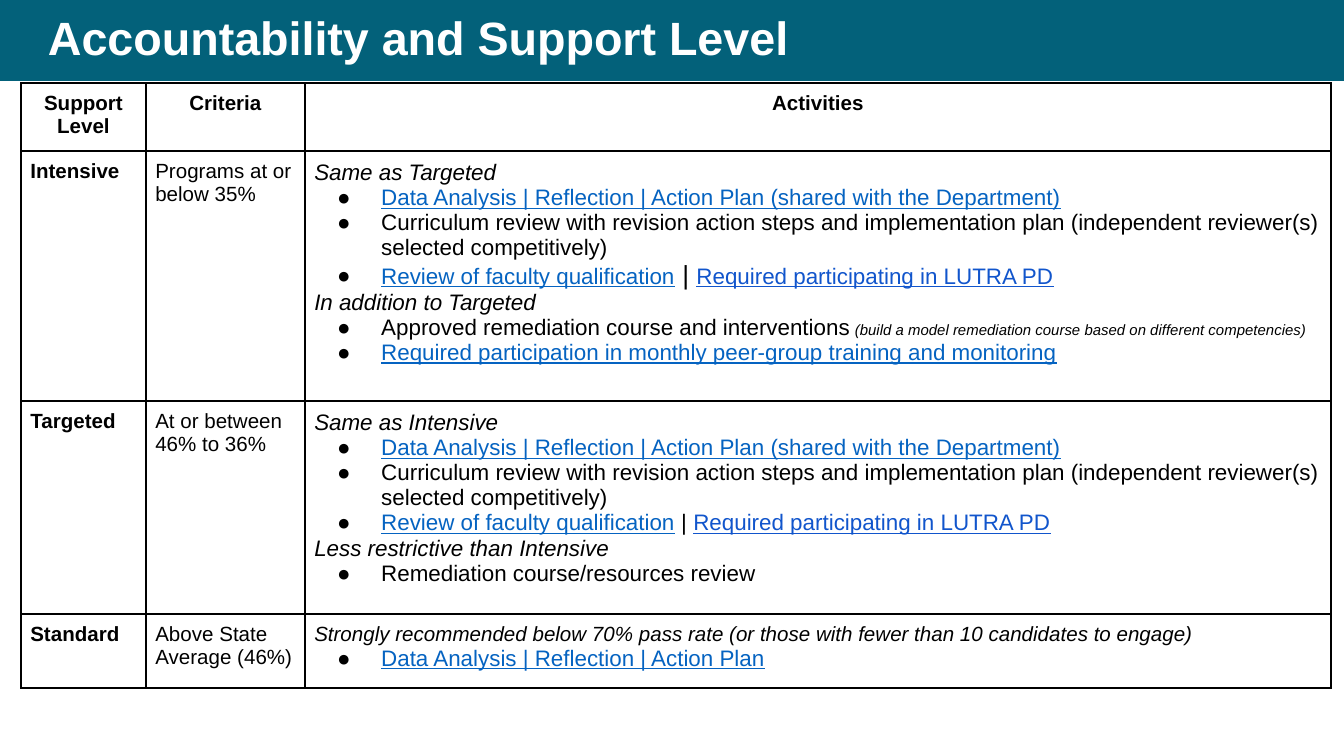
from lxml.etree import SubElement
from pptx import Presentation
from pptx.dml.color import RGBColor
from pptx.enum.shapes import MSO_SHAPE
from pptx.enum.text import MSO_ANCHOR, PP_ALIGN
from pptx.oxml.ns import qn
from pptx.util import Emu, Pt

PX = 914400 / 134.4

THEME = {
    "font": "Arial",
    "banner": "03617A", "white": "FFFFFF", "ink": "000000",
    "link": "0563C1", "course_link": "1155CC",
    "title": 25, "label": 11, "body": 12, "divider": 14, "note": 8,
}


def px(length):
    return Emu(round(length * PX))


def write(paragraph, text, size="body", color="ink", bold=False, italic=False, underline=False):
    run = paragraph.add_run()
    run.text = text
    font = run.font
    font.name = THEME["font"]
    font.size = Pt(THEME[size])
    font.color.rgb = RGBColor.from_string(THEME[color])
    font.bold, font.italic, font.underline = bold, italic, underline


presentation = Presentation()
presentation.slide_width, presentation.slide_height = px(1344), px(756)
slide = presentation.slides.add_slide(presentation.slide_layouts[6])

# Banner and title
banner = slide.shapes.add_shape(MSO_SHAPE.RECTANGLE, 0, 0, px(1344), px(81))
banner.shadow.inherit = False
banner.fill.solid()
banner.fill.fore_color.rgb = RGBColor.from_string(THEME["banner"])
banner.line.fill.background()

title_frame = slide.shapes.add_textbox(px(38), 0, px(1242), px(81)).text_frame
title_frame.word_wrap = True
title_frame.vertical_anchor = MSO_ANCHOR.MIDDLE
title_frame.margin_left = title_frame.margin_right = px(10)
title_frame.margin_top = title_frame.margin_bottom = px(5)
title_frame.paragraphs[0].line_spacing = 0.9
write(title_frame.paragraphs[0], "Accountability and Support Level",
      size="title", color="white", bold=True)

# Activities: each line is (bulleted, [(text, format), ...])
link = {"color": "link", "underline": True}
course_link = {"color": "course_link", "underline": True}
italic = {"italic": True}


def review_lines(divider_size):
    return [
        (True, [("Data Analysis | Reflection | Action Plan (shared with the Department)", link)]),
        (True, [("Curriculum review with revision action steps and implementation plan "
                 "(independent reviewer(s) selected competitively)", {})]),
        (True, [("Review of faculty qualification", link),
                (" | ", {"size": divider_size}),
                ("Required participating in LUTRA PD", course_link)]),
    ]


intensive = [
    (False, [("Same as Targeted", italic)]),
    *review_lines("divider"),
    (False, [("In addition to Targeted", italic)]),
    (True, [("Approved remediation course and interventions", {}),
            (" (build a model remediation course based on different competencies)",
             {"size": "note", "italic": True})]),
    (True, [("Required participation in monthly peer-group training and monitoring", link)]),
]
targeted = [
    (False, [("Same as Intensive", italic)]),
    *review_lines("body"),
    (False, [("Less restrictive than Intensive", italic)]),
    (True, [("Remediation course/resources review", {})]),
]
standard = [
    (False, [("Strongly recommended below 70% pass rate "
              "(or those with fewer than 10 candidates to engage)",
              {"size": "label", "italic": True})]),
    (True, [("Data Analysis | Reflection | Action Plan", link)]),
]

# Table content, every cell as a list of lines
heading = {"size": "label", "bold": True}
rows = [[[(False, [(text, heading)])] for text in ("Support Level", "Criteria", "Activities")]]
for level, criteria, activities in [
    ("Intensive", "Programs at or below 35%", intensive),
    ("Targeted", "At or between 46% to 36%", targeted),
    ("Standard", "Above State Average (46%)", standard),
]:
    rows.append([[(False, [(level, heading)])],
                 [(False, [(criteria, {"size": "label"})])],
                 activities])

# Table grid
column_widths = [125, 159, 1026]
row_heights = [65, 250, 213, 74]
table = slide.shapes.add_table(len(row_heights), len(column_widths), px(21), px(83),
                               px(sum(column_widths)), px(sum(row_heights))).table
table.first_row = table.horz_banding = False
for column, width in zip(table.columns, column_widths):
    column.width = px(width)
for row, height in zip(table.rows, row_heights):
    row.height = px(height)

# Fill the cells
for row_index, row in enumerate(rows):
    for column_index, lines in enumerate(row):
        cell = table.cell(row_index, column_index)
        cell.margin_left = cell.margin_right = cell.margin_top = cell.margin_bottom = Pt(5)
        properties = cell._tc.get_or_add_tcPr()
        for side in ("a:lnL", "a:lnR", "a:lnT", "a:lnB"):
            border = SubElement(properties, qn(side), w=str(Pt(1)))
            border_fill = SubElement(border, qn("a:solidFill"))
            SubElement(border_fill, qn("a:srgbClr"), val=THEME["ink"])
        cell.fill.background()

        for line_index, (bulleted, runs) in enumerate(lines):
            frame = cell.text_frame
            paragraph = frame.add_paragraph() if line_index else frame.paragraphs[0]
            paragraph.alignment = PP_ALIGN.LEFT if row_index else PP_ALIGN.CENTER
            if bulleted:
                format_xml = paragraph._p.get_or_add_pPr()
                format_xml.set("marL", str(px(67)))
                format_xml.set("indent", str(px(-44)))
                bullet_color = SubElement(format_xml, qn("a:buClr"))
                SubElement(bullet_color, qn("a:srgbClr"), val=THEME["ink"])
                SubElement(format_xml, qn("a:buFont"), typeface=THEME["font"])
                SubElement(format_xml, qn("a:buChar"), char="●")
            for text, run_format in runs:
                write(paragraph, text, **run_format)

presentation.save("out.pptx")
